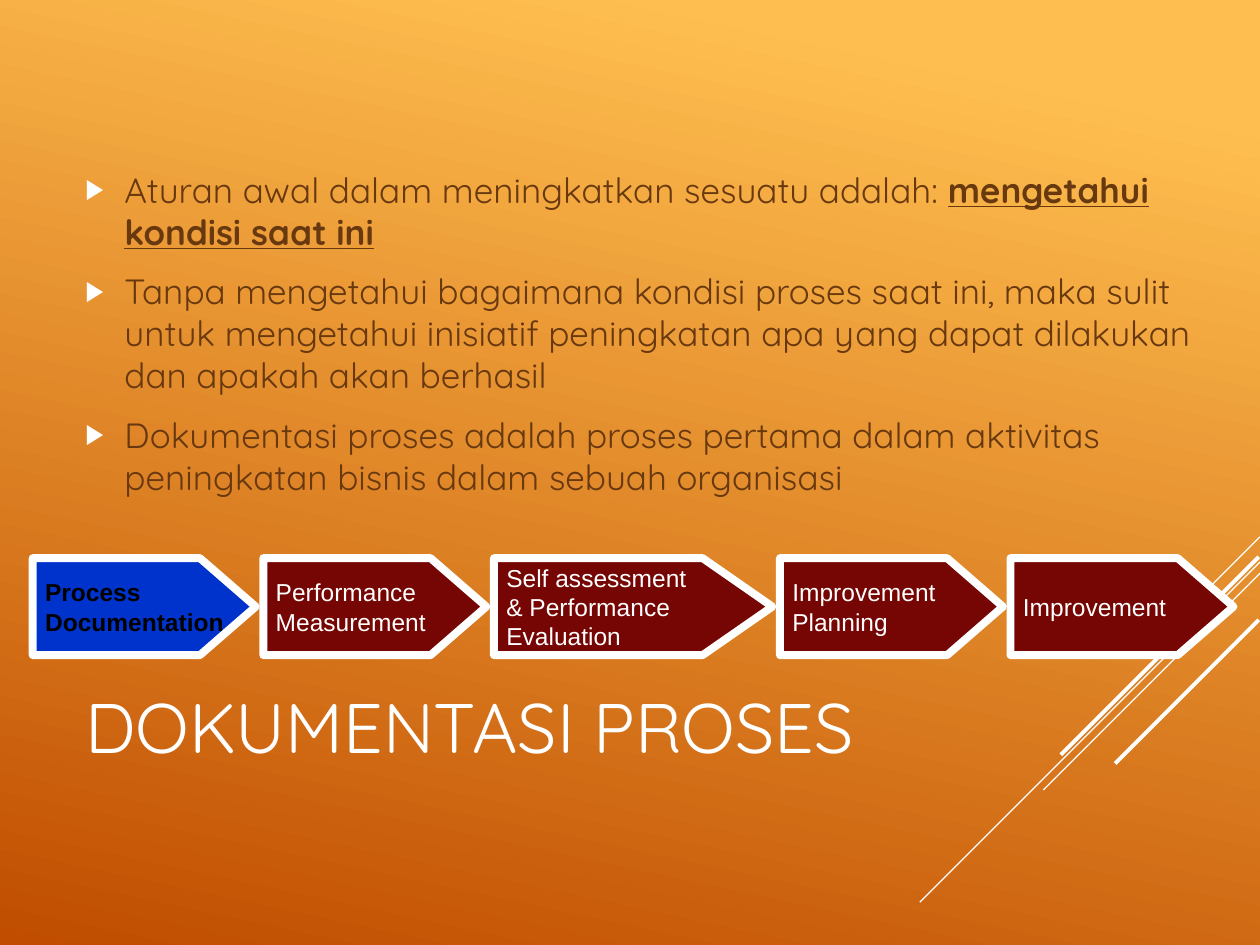
from lxml.etree import SubElement
from pptx import Presentation
from pptx.dml.color import RGBColor
from pptx.enum.shapes import MSO_CONNECTOR, MSO_SHAPE
from pptx.enum.text import MSO_ANCHOR, MSO_AUTO_SIZE, PP_ALIGN
from pptx.oxml.ns import qn
from pptx.util import Inches, Pt

# Content
TITLE = "DOKUMENTASI PROSES"
BULLETS = [
    [("Aturan awal dalam meningkatkan sesuatu adalah: ", False),
     ("mengetahui kondisi saat ini", True)],
    [("Tanpa mengetahui bagaimana kondisi proses saat ini, maka sulit untuk "
      "mengetahui inisiatif peningkatan apa yang dapat dilakukan dan apakah "
      "akan berhasil", False)],
    [("Dokumentasi proses adalah proses pertama dalam aktivitas peningkatan "
      "bisnis dalam sebuah organisasi", False)],
]
STEPS = [  # lines of text, width, point depth
    (["Process", "Documentation"], 1.77, 0.575),
    (["Performance", "Measurement"], 1.77, 0.575),
    (["Self assessment", "& Performance", "Evaluation"], 2.21, 0.719),
    (["Improvement", "Planning"], 1.77, 0.575),
    (["Improvement"], 1.77, 0.575),
]
DIAGONALS = [  # right end x, y, horizontal and vertical run, weight
    (10, 4.26, 0.83, 0.75),
    (10, 4.46, 2.7, 0.75),
    (10, 4.55, 1.72, 0.75),
    (9.99, 4.42, 1.57, 2.25),
    (9.99, 4.92, 1.14, 2.25),
]
WHITE, BROWN, BLACK = "FFFFFF", "68380F", "000000"
ACTIVE, INACTIVE = "0033CC", "760603"
GRADIENT = [(0.1, "FFBF50"), (1, "C04D00")]
STEP_LEFT, STEP_TOP, STEP_HEIGHT, STEP_GAP = 0.26, 4.43, 0.77, 0.06


def color(value):
    return RGBColor.from_string(value)


def add_run(paragraph, text, font_color, **format_values):
    run = paragraph.add_run()
    run.text = text
    run.font.color.rgb = color(font_color)
    for name, value in format_values.items():
        setattr(run.font, name, value)


def format_frame(frame, **format_values):
    values = {"auto_size": MSO_AUTO_SIZE.NONE,
              "vertical_anchor": MSO_ANCHOR.MIDDLE, **format_values}
    for name, value in values.items():
        setattr(frame, name, value)


def add_bullet(paragraph):
    properties = paragraph._p.get_or_add_pPr()
    properties.set("marL", str(Inches(0.31)))
    properties.set("indent", str(-Inches(0.31)))
    bullet_color = SubElement(properties, qn("a:buClr"))
    SubElement(bullet_color, qn("a:srgbClr"), val=WHITE)
    SubElement(properties, qn("a:buSzPct"), val="80000")
    SubElement(properties, qn("a:buFont"), typeface="Arial")
    SubElement(properties, qn("a:buChar"), char="▶")


presentation = Presentation()
presentation.slide_width, presentation.slide_height = Inches(10), Inches(7.5)
slide = presentation.slides.add_slide(presentation.slide_layouts[5])
shapes = slide.shapes

# Background
background = slide.background.fill
background.gradient()
background.gradient_angle = 360 - 102
for stop, (position, value) in zip(background.gradient_stops, GRADIENT):
    stop.position = position
    stop.color.rgb = color(value)

# Diagonal lines
for x, y, run_length, weight in DIAGONALS:
    line = shapes.add_connector(
        MSO_CONNECTOR.STRAIGHT, Inches(x), Inches(y),
        Inches(x - run_length), Inches(y + run_length))
    line.line.color.rgb = color(WHITE)
    line.line.width = Pt(weight)
    SubElement(line._element.spPr, qn("a:effectLst"))

# Title
title = shapes.title
title.left, title.top = Inches(0.58), Inches(4.92)
title.width, title.height = Inches(7.17), Inches(1.67)
format_frame(title.text_frame, word_wrap=True)
paragraph = title.text_frame.paragraphs[0]
paragraph.alignment = PP_ALIGN.LEFT
add_run(paragraph, TITLE, WHITE, name="Quicksand", size=Pt(40))

# Bulleted text
body = shapes.add_textbox(Inches(0.58), Inches(0.58), Inches(9.2), Inches(4.12))
frame = body.text_frame
format_frame(frame, word_wrap=True)
for index, runs in enumerate(BULLETS):
    paragraph = frame.add_paragraph() if index else frame.paragraphs[0]
    paragraph.space_before, paragraph.space_after = Pt(4), Pt(6)
    add_bullet(paragraph)
    for text, strong in runs:
        add_run(paragraph, text, BROWN, name="Quicksand", size=Pt(20),
                bold=strong, underline=strong)

# Process steps, the first one highlighted
left = STEP_LEFT
for index, (lines, width, depth) in enumerate(STEPS):
    active = index == 0
    step = shapes.add_shape(MSO_SHAPE.PENTAGON, Inches(left), Inches(STEP_TOP),
                            Inches(width), Inches(STEP_HEIGHT))
    step.adjustments[0] = depth
    step.shadow.inherit = False
    step.fill.solid()
    step.fill.fore_color.rgb = color(ACTIVE if active else INACTIVE)
    step.line.color.rgb = color(WHITE)
    step.line.width = Pt(4.5)
    frame = step.text_frame
    format_frame(frame, word_wrap=False)
    for number, text in enumerate(lines):
        paragraph = frame.add_paragraph() if number else frame.paragraphs[0]
        paragraph.alignment = PP_ALIGN.LEFT
        add_run(paragraph, text, BLACK if active else WHITE,
                name="Arial", size=Pt(14), bold=active)
    left += width + STEP_GAP

presentation.save("out.pptx")
